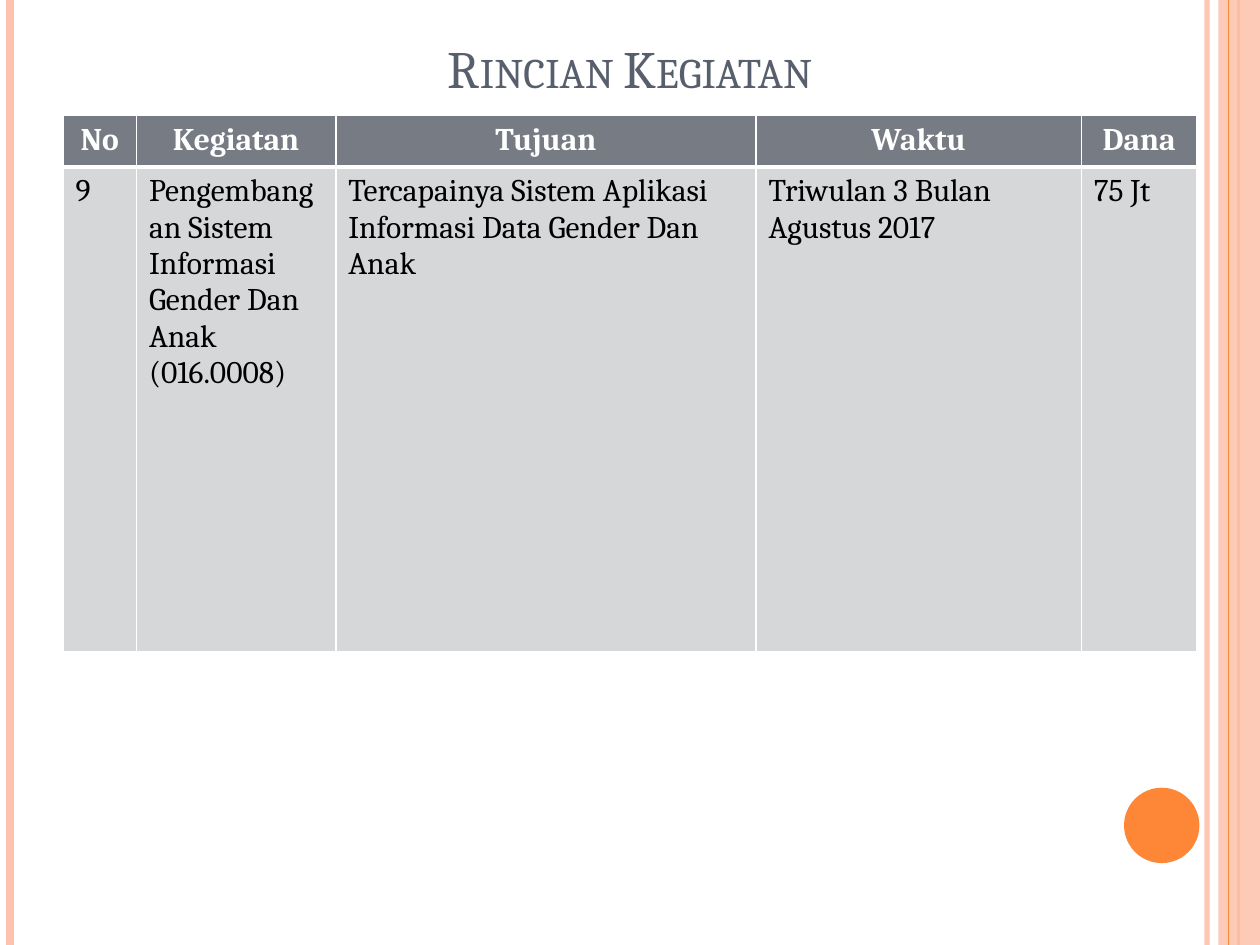
from lxml.etree import SubElement
from pptx import Presentation
from pptx.dml.color import RGBColor
from pptx.enum.shapes import MSO_CONNECTOR, MSO_SHAPE
from pptx.enum.text import MSO_ANCHOR, PP_ALIGN
from pptx.oxml import parse_xml
from pptx.oxml.ns import nsdecls, qn
from pptx.util import Cm, Pt

FONT = "Cambria"
ORANGE = "FE8637"
PEACH = "FEC3AE"


def paint(color_format, color, opacity=100):
    color_format.rgb = RGBColor.from_string(color)
    if opacity < 100:
        for element in color_format._xFill.iter(qn("a:srgbClr")):
            SubElement(element, qn("a:alpha"), val=str(opacity * 1000))


presentation = Presentation()
presentation.slide_width = Cm(25.4)
presentation.slide_height = Cm(19.05)
slide = presentation.slides.add_slide(presentation.slide_layouts[5])
shapes = slide.shapes

# Vertical stripes and the translucent band on the right
stripes = [
    (24.33, PEACH, 3, 93),
    (0.2, PEACH, 4.5, 100),
    (24.97, ORANGE, 1.5, 100),
    (None, PEACH, 0, 87),
    (24.77, ORANGE, 0.75, 100),
]
for x, color, width, opacity in stripes:
    if x is None:
        band = shapes.add_shape(MSO_SHAPE.RECTANGLE, Cm(24.56), 0, Cm(0.84), Cm(19.05))
        band.shadow.inherit = False
        band.line.fill.background()
        band.fill.solid()
        paint(band.fill.fore_color, color, opacity)
        continue
    stripe = shapes.add_connector(MSO_CONNECTOR.STRAIGHT, Cm(x), 0, Cm(x), Cm(19.05))
    stripe.line.width = Pt(width)
    stripe.line.fill.solid()
    paint(stripe.line.fill.fore_color, color, opacity)
    SubElement(stripe._element.spPr, qn("a:effectLst"))

# Orange disc
disc = shapes.add_shape(MSO_SHAPE.OVAL, Cm(22.66), Cm(15.88), Cm(1.52), Cm(1.52))
disc.shadow.inherit = False
disc.line.fill.background()
disc.fill.solid()
paint(disc.fill.fore_color, ORANGE)

# Activity table
rows = [
    ["No", "Kegiatan", "Tujuan", "Waktu", "Dana"],
    [
        "9",
        "Pengembangan Sistem Informasi Gender Dan Anak (016.0008)",
        "Tercapainya Sistem Aplikasi Informasi Data Gender Dan Anak",
        "Triwulan 3 Bulan Agustus 2017",
        "75 Jt",
    ],
]
column_widths = [1.48, 4.02, 8.47, 6.56, 2.33]
row_heights = [1.04, 9.76]
table = shapes.add_table(
    len(rows), len(column_widths), Cm(1.27), Cm(2.33),
    Cm(sum(column_widths)), Cm(sum(row_heights)),
).table
for column, width in zip(table.columns, column_widths):
    column.width = Cm(width)

for row_index, texts in enumerate(rows):
    header = row_index == 0
    table.rows[row_index].height = Cm(row_heights[row_index])
    # The rule between header and body is thicker than the others
    borders = {"L": 1, "R": 1, "T": 1 if header else 3, "B": 3 if header else 1}
    for column_index, text in enumerate(texts):
        cell = table.cell(row_index, column_index)
        cell.text = text
        paragraph = cell.text_frame.paragraphs[0]
        paragraph.alignment = PP_ALIGN.CENTER if header else PP_ALIGN.LEFT
        paragraph.font.name = FONT
        paragraph.font.size = Pt(18)
        paragraph.font.bold = header
        paint(paragraph.font.color, "FFFFFF" if header else "000000")
        cell.fill.solid()
        paint(cell.fill.fore_color, "777C84" if header else "D6D7D9")
        properties = cell._tc.get_or_add_tcPr()
        for position, (side, points) in enumerate(borders.items()):
            properties.insert(position, parse_xml(
                f'<a:ln{side} {nsdecls("a")} w="{Pt(points)}"><a:solidFill>'
                f'<a:srgbClr val="FFFFFF"/></a:solidFill></a:ln{side}>'
            ))

# Title in small capitals
title = shapes.title
title.left, title.top, title.width, title.height = Cm(1.27), Cm(-0.42), Cm(22.86), Cm(2.54)
title.text_frame.text = "Rincian Kegiatan"
title.text_frame.vertical_anchor = MSO_ANCHOR.BOTTOM
paragraph = title.text_frame.paragraphs[0]
paragraph.alignment = PP_ALIGN.CENTER
paragraph.font.name = FONT
paragraph.font.size = Pt(30)
paint(paragraph.font.color, "575F6D")
paragraph.runs[0]._r.get_or_add_rPr().set("cap", "small")

presentation.save("out.pptx")
